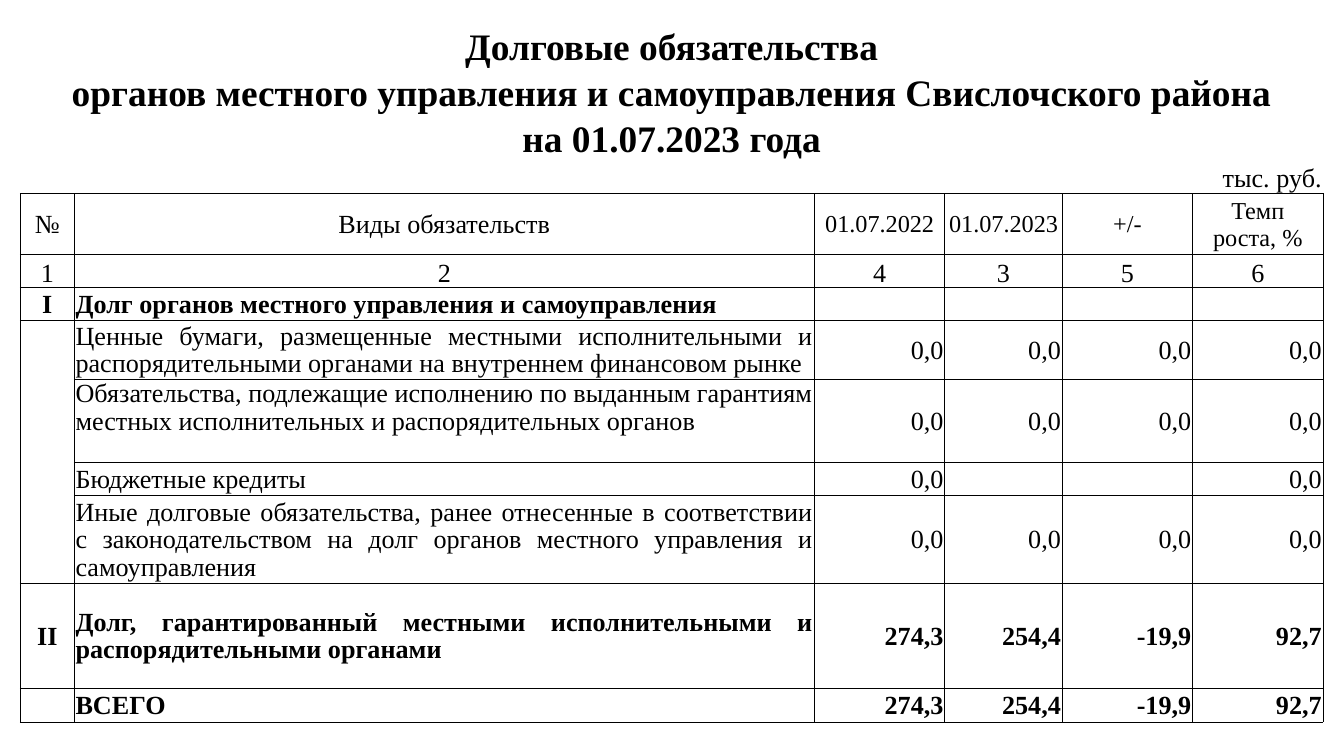
from dataclasses import dataclass

from lxml import etree
from pptx import Presentation
from pptx.dml.color import RGBColor
from pptx.enum.text import MSO_ANCHOR, PP_ALIGN
from pptx.oxml.ns import qn
from pptx.util import Pt

LEFT, CENTER, RIGHT, JUSTIFY = (
    PP_ALIGN.LEFT, PP_ALIGN.CENTER, PP_ALIGN.RIGHT, PP_ALIGN.JUSTIFY)
TOP, MIDDLE, BOTTOM = MSO_ANCHOR.TOP, MSO_ANCHOR.MIDDLE, MSO_ANCHOR.BOTTOM


@dataclass(frozen=True)
class Theme:
    font: str = "Times New Roman"
    ink: str = "000000"
    paper: str = "FFFFFF"
    title: float = 20
    body: float = 14
    head: float = 13
    spacing: float = 0.95
    border: float = 0.5
    inset: float = 0.7


THEME = Theme()

COL_WIDTHS = [28.9, 396.5, 69.9, 62.9, 69.9, 69.9]
TITLE_HEIGHTS = [24.6, 24.6, 24.6, 17.7]
HEAD_HEIGHTS = [32.7, 17.7]
BODY_HEIGHTS = [16, 31.6, 44.5, 17.1, 47.1, 56.3, 16]

TITLE = [
    "Долговые обязательства",
    "органов местного управления и самоуправления Свислочского района",
    "на 01.07.2023 года",
]
UNIT = "тыс. руб."
HEAD = ["№", "Виды обязательств", "01.07.2022", "01.07.2023", "+/-", "Темп\nроста, %"]
NUMBERS = ["1", "2", "4", "3", "5", "6"]
ZEROS = ["0,0"] * 4
TOTALS = ["274,3", "254,4", "-19,9", "92,7"]
BODY = [
    ["I", "Долг органов местного управления и самоуправления"] + [""] * 4,
    ["", "Ценные бумаги, размещенные местными исполнительными и "
         "распорядительными органами на внутреннем финансовом рынке"] + ZEROS,
    ["", "Обязательства, подлежащие исполнению по выданным гарантиям "
         "местных исполнительных и распорядительных органов"] + ZEROS,
    ["", "Бюджетные кредиты", "0,0", "", "", "0,0"],
    ["", "Иные долговые обязательства, ранее отнесенные в соответствии с "
         "законодательством на долг органов местного управления и "
         "самоуправления"] + ZEROS,
    ["II", "Долг, гарантированный местными исполнительными и "
           "распорядительными органами"] + TOTALS,
    ["", "ВСЕГО"] + TOTALS,
]
BOLD_ROWS = {0, 5, 6}
GROUP_FIRST, GROUP_LAST = 1, 4
TOP_ROW, TOTAL_ROW = 2, 6


def set_borders(cell, sides):
    tcPr = cell._tc.get_or_add_tcPr()
    for i, side in enumerate("LRTB"):
        ln = etree.Element(qn(f"a:ln{side}"), w=str(Pt(THEME.border)))
        if side in sides:
            fill = etree.SubElement(ln, qn("a:solidFill"))
            etree.SubElement(fill, qn("a:srgbClr"), val=THEME.ink)
        else:
            etree.SubElement(ln, qn("a:noFill"))
        tcPr.insert(i, ln)


def fill_cell(cell, text, size, align, anchor=MIDDLE, bold=False,
              sides="LRTB", spacing=None):
    cell.margin_left = cell.margin_right = cell.margin_top = Pt(THEME.inset)
    cell.margin_bottom = 0
    cell.vertical_anchor = anchor
    cell.fill.solid()
    cell.fill.fore_color.rgb = RGBColor.from_string(THEME.paper)
    set_borders(cell, sides)
    cell.text_frame.text = text
    for p in cell.text_frame.paragraphs:
        p.alignment = align
        if spacing:
            p.line_spacing = spacing
        for r in p.runs:
            r.font.name = THEME.font
            r.font.size = Pt(size)
            r.font.bold = bold
            r.font.color.rgb = RGBColor.from_string(THEME.ink)
        if not p.runs:
            etree.SubElement(p._p, qn("a:endParaRPr"), sz=str(int(size * 100)))


def add_title_rows(table):
    last = len(COL_WIDTHS) - 1
    for i, text in enumerate(TITLE + [UNIT]):
        is_unit = i == len(TITLE)
        for j in range(last + 1):
            set_borders(table.cell(i, j), "B" if is_unit else "")
        table.cell(i, 0).merge(table.cell(i, last))
        cell = table.cell(i, 0)
        for ln in list(cell._tc.tcPr):
            cell._tc.tcPr.remove(ln)
        fill_cell(cell, text, THEME.body if is_unit else THEME.title,
                  RIGHT if is_unit else CENTER, BOTTOM, not is_unit,
                  "B" if is_unit else "")


def add_head_rows(table, start):
    for j, (name, number) in enumerate(zip(HEAD, NUMBERS)):
        fill_cell(table.cell(start, j), name,
                  THEME.body if j < 2 else THEME.head, CENTER)
        fill_cell(table.cell(start + 1, j), number, THEME.body, CENTER, BOTTOM)


def add_body_rows(table, start):
    for i, row in enumerate(BODY):
        for j, text in enumerate(row):
            align = (CENTER, JUSTIFY)[j] if j < 2 else RIGHT
            if i == TOTAL_ROW and j == 1:
                align = LEFT
            sides = "LRTB"
            if j == 0 and GROUP_FIRST <= i <= GROUP_LAST:
                sides = "LR" + "T" * (i == GROUP_FIRST) + "B" * (i == GROUP_LAST)
            anchor = TOP if i == TOP_ROW and j == 1 else MIDDLE
            fill_cell(table.cell(start + i, j), text, THEME.body, align, anchor,
                      i in BOLD_ROWS, sides, THEME.spacing)


def add_debt_table(slide, left, top):
    heights = TITLE_HEIGHTS + HEAD_HEIGHTS + BODY_HEIGHTS
    frame = slide.shapes.add_table(
        len(heights), len(COL_WIDTHS), Pt(left), Pt(top),
        Pt(sum(COL_WIDTHS)), Pt(sum(heights)))
    table = frame.table
    table.first_row = table.horz_banding = False
    for col, width in zip(table.columns, COL_WIDTHS):
        col.width = Pt(width)
    for row, height in zip(table.rows, heights):
        row.height = Pt(height)
    add_title_rows(table)
    add_head_rows(table, len(TITLE_HEIGHTS))
    add_body_rows(table, len(TITLE_HEIGHTS + HEAD_HEIGHTS))


def main():
    prs = Presentation()
    prs.slide_width, prs.slide_height = Pt(720), Pt(405)
    slide = prs.slides.add_slide(prs.slide_layouts[6])
    add_debt_table(slide, 10.9, 12.3)
    prs.save("out.pptx")


if __name__ == "__main__":
    main()
